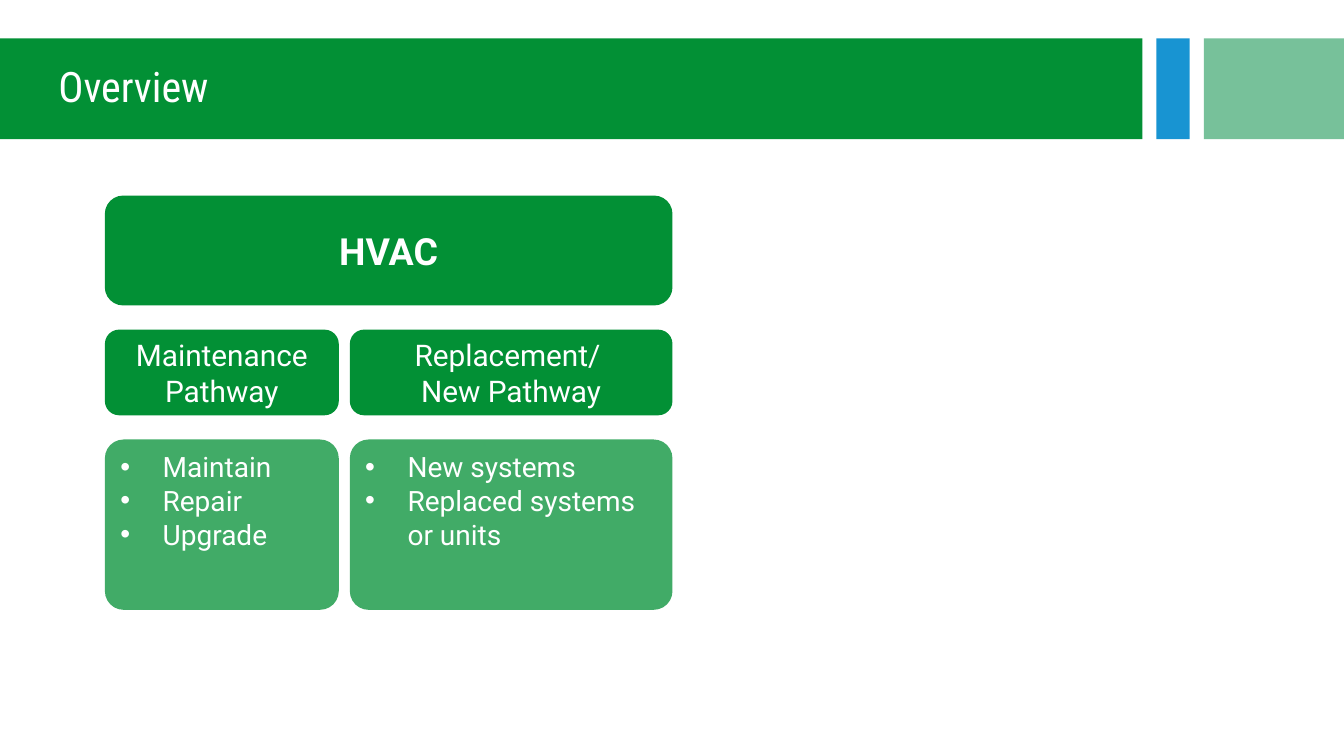
from lxml.etree import SubElement
from pptx import Presentation
from pptx.dml.color import RGBColor
from pptx.enum.shapes import MSO_SHAPE
from pptx.enum.text import MSO_ANCHOR, PP_ALIGN
from pptx.oxml.ns import qn
from pptx.util import Inches, Pt

COLORS = {"green": "029035", "blue": "1894D2", "mint": "77C19A", "white": "FFFFFF"}
TITLE = "Overview"
BANDS = [(-0.02, 11.35, "green"), (11.47, 0.33, "blue"), (11.94, 1.39, "mint")]
SYSTEM = "HVAC"
PATHWAYS = [
    (2.32, ["Maintenance Pathway"], ["Maintain", "Repair", "Upgrade"]),
    (3.2, ["Replacement/ ", "New Pathway"],
     ["New systems", "Replaced systems or units"]),
]
LEFT, TOP, COL_GAP, ROW_GAP = 1.04, 1.94, 0.11, 0.24
SYSTEM_H, PATHWAY_H, ACTIONS_H = 1.09, 0.85, 1.69
BAND_TOP, BAND_H = 0.38, 1


def add_box(s, shape, x, y, w, h, color, alpha=None):
    sp = s.shapes.add_shape(shape, Inches(x), Inches(y), Inches(w), Inches(h))
    sp.shadow.inherit = False
    sp.fill.solid()
    sp.fill.fore_color.rgb = RGBColor.from_string(COLORS[color])
    sp.line.fill.background()
    if alpha:
        clr = sp.fill._xPr.find(".//" + qn("a:srgbClr"))
        SubElement(clr, qn("a:alpha"), val=str(alpha * 1000))
    return sp


def write(sp, lines, size, font="Roboto", bold=False, align=PP_ALIGN.CENTER,
          anchor=MSO_ANCHOR.MIDDLE, margin=0, indent=0, bullet=None, spacing=None):
    tf = sp.text_frame
    tf.word_wrap = True
    tf.vertical_anchor = anchor
    for i, line in enumerate(lines):
        p = tf.paragraphs[0] if i == 0 else tf.add_paragraph()
        p.alignment = align
        p.line_spacing = spacing
        pPr = p._p.get_or_add_pPr()
        pPr.set("marL", str(Inches(margin)))
        pPr.set("indent", str(Inches(indent)))
        if bullet:
            SubElement(pPr, qn("a:buFont"), typeface="Arial")
            SubElement(pPr, qn("a:buChar"), char=bullet)
        r = p.add_run()
        r.text = line
        r.font.name = font
        r.font.size = Pt(size)
        r.font.bold = bold
        r.font.color.rgb = RGBColor.from_string(COLORS["white"])


def main():
    """Build the overview slide with its header and pathway boxes."""
    prs = Presentation()
    prs.slide_width, prs.slide_height = Inches(13.33), Inches(7.5)
    s = prs.slides.add_slide(prs.slide_layouts[6])

    bands = [add_box(s, MSO_SHAPE.RECTANGLE, x, BAND_TOP, w, BAND_H, color)
             for x, w, color in BANDS]
    write(bands[0], [TITLE], 30, font="Roboto Condensed", align=PP_ALIGN.LEFT,
          margin=0.5, spacing=0.9)

    rounded = MSO_SHAPE.ROUNDED_RECTANGLE
    total_w = sum(w for w, _, _ in PATHWAYS) + COL_GAP * (len(PATHWAYS) - 1)
    sp = add_box(s, rounded, LEFT, TOP, total_w, SYSTEM_H, "green")
    write(sp, [SYSTEM], 26.7, bold=True)

    pathway_y = TOP + SYSTEM_H + ROW_GAP
    actions_y = pathway_y + PATHWAY_H + ROW_GAP
    x = LEFT
    for w, name, actions in PATHWAYS:
        sp = add_box(s, rounded, x, pathway_y, w, PATHWAY_H, "green")
        write(sp, name, 21.3)
        sp = add_box(s, rounded, x, actions_y, w, ACTIONS_H, "green", alpha=75)
        sp.adjustments[0] = 0.11
        write(sp, actions, 20, align=PP_ALIGN.LEFT, anchor=MSO_ANCHOR.TOP,
              margin=0.42, indent=-0.42, bullet="•")
        x += w + COL_GAP

    prs.save("out.pptx")


if __name__ == "__main__":
    main()
